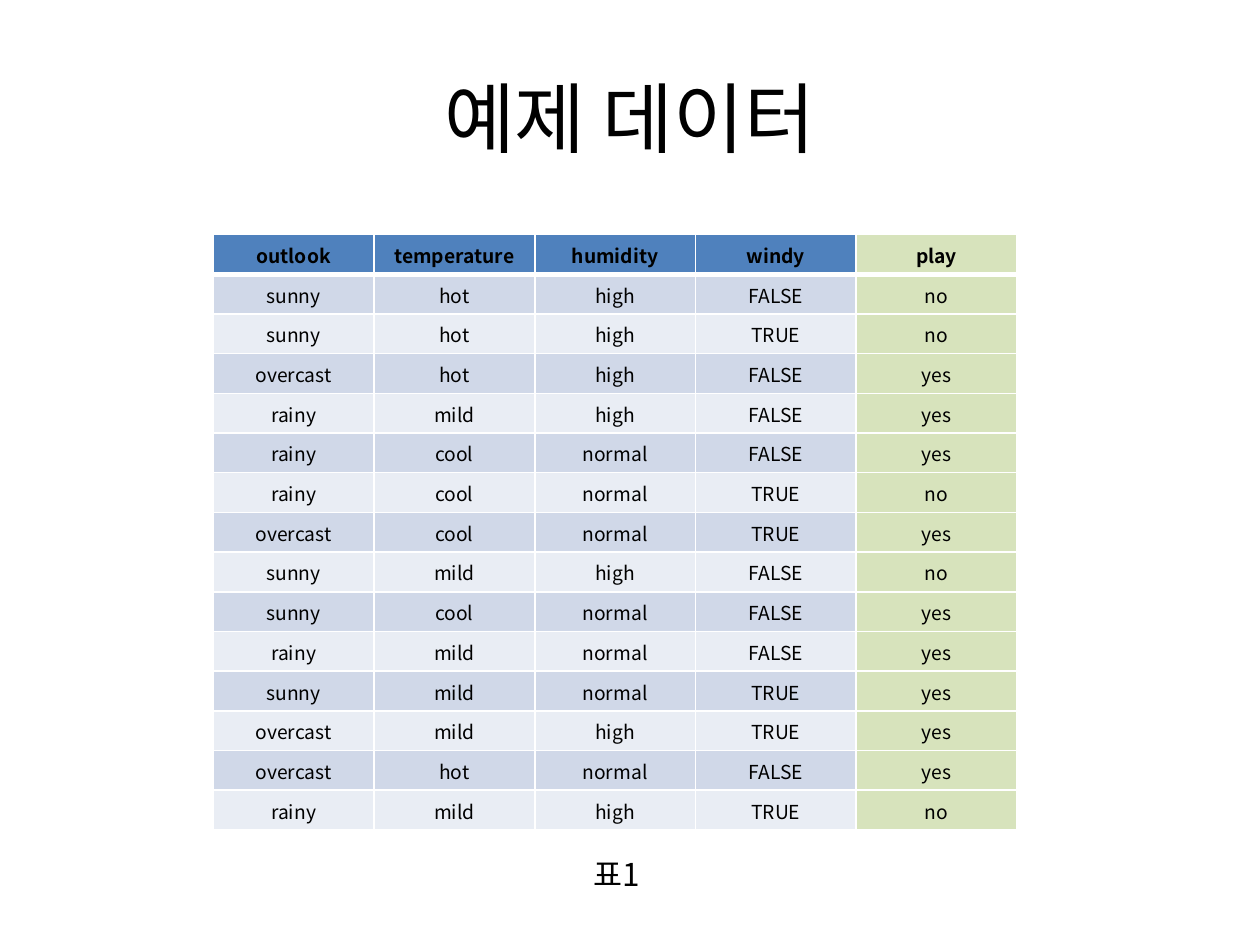
from dataclasses import dataclass

from lxml import etree
from pptx import Presentation
from pptx import util as u
from pptx.dml.color import RGBColor
from pptx.enum import text
from pptx.oxml import ns


@dataclass(frozen=True)
class Theme:
    font: str = "Noto Sans CJK KR"
    ink: str = "000000"
    header: str = "4F81BD"
    bands: tuple = ("D0D8E8", "E9EDF4")
    target: str = "9BBB59"
    target_opacity: int = 40
    border: str = "FFFFFF"
    thin: int = 1
    thick: int = 3
    title_size: int = 44
    table_size: int = 11
    caption_size: int = 18


def add_child(parent, tag, **attributes):
    return etree.SubElement(parent, ns.qn(tag), attributes)


class SlideBuilder:
    def __init__(self, slide, theme):
        self.slide = slide
        self.theme = theme

    def add_words(self, frame, words, size, bold=False, align=text.PP_ALIGN.CENTER):
        paragraph = frame.paragraphs[0]
        paragraph.alignment = align
        run = paragraph.add_run()
        run.text = words
        formats = {"name": self.theme.font, "size": u.Pt(size), "bold": bold}
        for name, value in formats.items():
            setattr(run.font, name, value)
        run.font.color.rgb = RGBColor.from_string(self.theme.ink)
        # Hangul uses the East Asian typeface
        add_child(run.font._element, "a:ea", typeface=self.theme.font)

    def text_box(self, words, box, size, frame, align=text.PP_ALIGN.CENTER):
        shape = self.slide.shapes.add_textbox(*map(u.Cm, box))
        for name, value in {"word_wrap": True, **frame}.items():
            setattr(shape.text_frame, name, value)
        self.add_words(shape.text_frame, words, size, align=align)

    def borders(self, cell, top, bottom):
        properties = cell._tc.get_or_add_tcPr()
        thin = self.theme.thin
        for side, width in (("L", thin), ("R", thin), ("T", top), ("B", bottom)):
            line = add_child(properties, f"a:ln{side}", w=str(u.Pt(width)))
            fill = add_child(line, "a:solidFill")
            add_child(fill, "a:srgbClr", val=self.theme.border)

    def fill(self, cell, color, opacity=100):
        cell.fill.solid()
        cell.fill.fore_color.rgb = RGBColor.from_string(color)
        if opacity < 100:
            swatch = cell._tc.tcPr.find(ns.qn("a:solidFill"))[0]
            add_child(swatch, "a:alpha", val=str(opacity * 1000))

    def table(self, rows, left, top, column_width, row_height):
        theme = self.theme
        count = len(rows[0])
        table = self.slide.shapes.add_table(
            len(rows), count, u.Cm(left), u.Cm(top),
            u.Cm(column_width * count), u.Cm(row_height * len(rows))).table
        for column in table.columns:
            column.width = u.Cm(column_width)
        cell_formats = {
            "margin_left": u.Cm(0.02), "margin_right": u.Cm(0.02),
            "margin_top": u.Cm(0.02), "margin_bottom": u.Cm(0),
            "vertical_anchor": text.MSO_ANCHOR.MIDDLE,
        }
        for i, values in enumerate(rows):
            table.rows[i].height = u.Cm(row_height)
            for j, value in enumerate(values):
                cell = table.cell(i, j)
                for name, setting in cell_formats.items():
                    setattr(cell, name, setting)
                self.borders(cell,
                             top=theme.thick if i == 1 else theme.thin,
                             bottom=theme.thick if i == 0 else theme.thin)
                if j == count - 1:
                    self.fill(cell, theme.target, theme.target_opacity)
                else:
                    self.fill(cell, theme.bands[(i - 1) % 2] if i else theme.header)
                self.add_words(cell.text_frame, value, theme.table_size, bold=i == 0)


WEATHER = """outlook temperature humidity windy play
sunny hot high FALSE no
sunny hot high TRUE no
overcast hot high FALSE yes
rainy mild high FALSE yes
rainy cool normal FALSE yes
rainy cool normal TRUE no
overcast cool normal TRUE yes
sunny mild high FALSE no
sunny cool normal FALSE yes
rainy mild normal FALSE yes
sunny mild normal TRUE yes
overcast mild high TRUE yes
overcast hot normal FALSE yes
rainy mild high TRUE no"""


def main():
    presentation = Presentation()
    presentation.slide_width, presentation.slide_height = u.Cm(25.4), u.Cm(19.05)
    theme = Theme()
    builder = SlideBuilder(
        presentation.slides.add_slide(presentation.slide_layouts[6]), theme)

    # Title
    builder.text_box("예제 데이터", (1.27, 0.76, 22.86, 3.18), theme.title_size,
                     frame={"vertical_anchor": text.MSO_ANCHOR.MIDDLE})

    # Weather table
    rows = [line.split() for line in WEATHER.splitlines()]
    builder.table(rows, left=4.3, top=4.73, column_width=3.24, row_height=0.8)

    # Caption
    builder.text_box("표1", (11.71, 17.12, 2, 1.02), theme.caption_size,
                     frame={"auto_size": text.MSO_AUTO_SIZE.SHAPE_TO_FIT_TEXT},
                     align=text.PP_ALIGN.LEFT)

    presentation.save("out.pptx")


if __name__ == "__main__":
    main()
